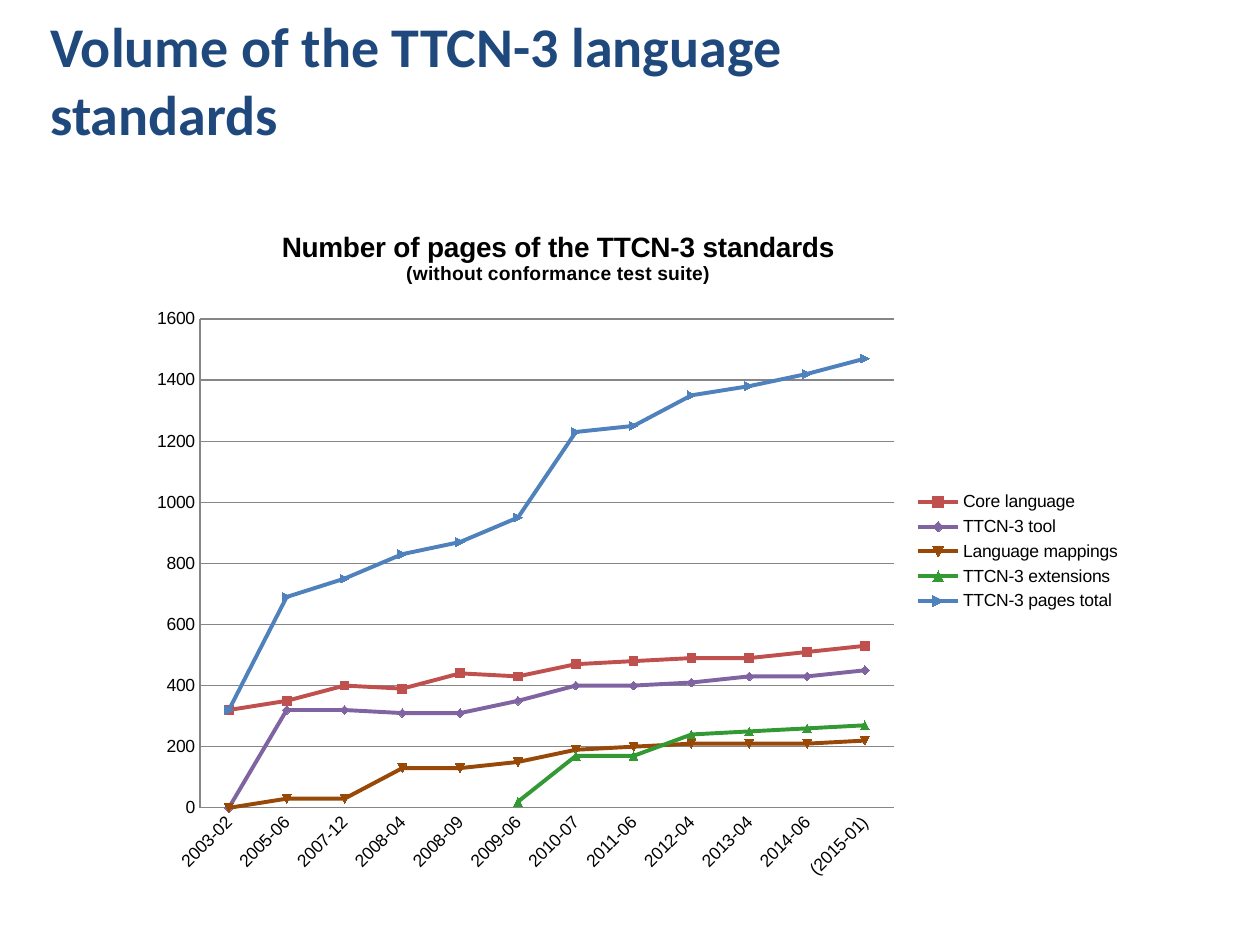
from dataclasses import dataclass

from lxml import etree
from pptx import Presentation
from pptx import util as u
from pptx.chart.data import CategoryChartData
from pptx.dml.color import RGBColor
from pptx.enum import chart as charts, text
from pptx.oxml.ns import qn

HEADING = "Volume of the TTCN-3 language\vstandards"
CHART_TITLE = [
    ("Number of pages of the TTCN-3 standards", 16),
    ("(without conformance test suite)", 11),
]
ISSUES = ["2003-02", "2005-06", "2007-12", "2008-04", "2008-09", "2009-06",
          "2010-07", "2011-06", "2012-04", "2013-04", "2014-06", "(2015-01)"]
PAGES = [
    ("Core language", "C0504D",
     [320, 350, 400, 390, 440, 430, 470, 480, 490, 490, 510, 530]),
    ("TTCN-3 tool", "8064A2",
     [0, 320, 320, 310, 310, 350, 400, 400, 410, 430, 430, 450]),
    ("Language mappings", "984807",
     [0, 30, 30, 130, 130, 150, 190, 200, 210, 210, 210, 220]),
    ("TTCN-3 extensions", "339933",
     [None] * 5 + [20, 170, 170, 240, 250, 260, 270]),
    ("TTCN-3 pages total", "4F81BD",
     [320, 690, 750, 830, 870, 950, 1230, 1250, 1350, 1380, 1420, 1470]),
]

# left, top, width, height in px
SLIDE_SIZE = (1260, 945)
HEADING_BOX = (38, 0, 1134, 158)
CHART_BOX = (136, 210, 998, 683)
PLOT_BOX = (200, 319, 694, 489)
CHART_TITLE_AT = (278, 226)


@dataclass(frozen=True)
class Theme:
    heading_font: str = "Calibri"
    chart_font: str = "Arial"
    heading: str = "1F497D"
    ink: str = "000000"
    grid: str = "868686"
    heading_size: int = 32
    label_size: int = 10
    series_width: float = 2.25
    marker_size: int = 5


THEME = Theme()


def px(value):
    return u.Emu(value * u.Inches(1) // 126)


def style_font(font, name, size, color, bold=False):
    font.name, font.size, font.bold = name, u.Pt(size), bold
    font.color.rgb = RGBColor.from_string(color)


def place_in_chart(element, index, box, inner=False):
    """Give a chart part a fixed place, as fractions of the chart box."""
    for old in element.findall(qn("c:layout")):
        element.remove(old)
    layout = etree.Element(qn("c:layout"))
    manual = etree.SubElement(layout, qn("c:manualLayout"))
    left, top, width, height = CHART_BOX
    fractions = [(box[0] - left) / width, (box[1] - top) / height]
    fractions += [length / whole for length, whole in zip(box[2:], (width, height))]
    settings = [("layoutTarget", "inner")] if inner else []
    settings += [("xMode", "edge"), ("yMode", "edge")]
    settings += [(key, f"{part:.4f}") for key, part in zip("xywh", fractions)]
    for key, value in settings:
        etree.SubElement(manual, qn(f"c:{key}")).set("val", value)
    element.insert(index, layout)


def add_heading(slide):
    frame = slide.shapes.add_textbox(*map(px, HEADING_BOX)).text_frame
    frame.word_wrap = True
    frame.vertical_anchor = text.MSO_ANCHOR.MIDDLE
    frame.text = HEADING
    for run in frame.paragraphs[0].runs:
        style_font(run.font, THEME.heading_font, THEME.heading_size, THEME.heading, True)


def add_page_chart(slide):
    data = CategoryChartData()
    data.categories = ISSUES
    for name, _, values in PAGES:
        data.add_series(name, values)
    frame = slide.shapes.add_chart(
        charts.XL_CHART_TYPE.LINE_MARKERS, *map(px, CHART_BOX), data)
    chart = frame.chart
    style_font(chart.font, THEME.chart_font, THEME.label_size, THEME.ink)
    add_chart_title(chart)
    style_axes(chart)
    chart.has_legend = True
    chart.legend.position = charts.XL_LEGEND_POSITION.RIGHT
    chart.legend.include_in_layout = False
    plot = chart.plots[0]
    plot.vary_by_categories = False
    for series, (_, color, _) in zip(plot.series, PAGES):
        style_series(series, RGBColor.from_string(color))
    plot_area = chart.value_axis._element.getparent()
    place_in_chart(plot_area, 0, PLOT_BOX, inner=True)


def add_chart_title(chart):
    chart.has_title = True
    title = chart.chart_title
    title.include_in_layout = False
    title.text_frame.text = "\n".join(line for line, _ in CHART_TITLE)
    for paragraph, (_, size) in zip(title.text_frame.paragraphs, CHART_TITLE):
        for run in paragraph.runs:
            style_font(run.font, THEME.chart_font, size, THEME.ink, True)
    place_in_chart(title._element, 1, CHART_TITLE_AT)


def style_axes(chart):
    values, issues = chart.value_axis, chart.category_axis
    values.minimum_scale, values.maximum_scale, values.major_unit = 0, 1600, 200
    values.has_major_gridlines = True
    for axis in (values, issues):
        axis.major_tick_mark = charts.XL_TICK_MARK.NONE
        style_font(axis.tick_labels.font, THEME.chart_font, THEME.label_size, THEME.ink)
    for line in (values.format.line, issues.format.line,
                 values.major_gridlines.format.line):
        line.color.rgb = RGBColor.from_string(THEME.grid)
        line.width = u.Pt(0.75)
    body = issues._element.find(qn("c:txPr")).find(qn("a:bodyPr"))
    body.set("rot", str(-45 * 60000))


def style_series(series, color):
    series.smooth = False
    series.format.line.color.rgb = color
    series.format.line.width = u.Pt(THEME.series_width)
    marker = series.marker
    marker.style = charts.XL_MARKER_STYLE.AUTOMATIC
    marker.size = THEME.marker_size
    marker.format.fill.solid()
    marker.format.fill.fore_color.rgb = color
    marker.format.line.color.rgb = color


def main():
    presentation = Presentation()
    presentation.slide_width, presentation.slide_height = map(px, SLIDE_SIZE)
    slide = presentation.slides.add_slide(presentation.slide_layouts[6])
    add_heading(slide)
    add_page_chart(slide)
    presentation.save("out.pptx")


if __name__ == "__main__":
    main()
